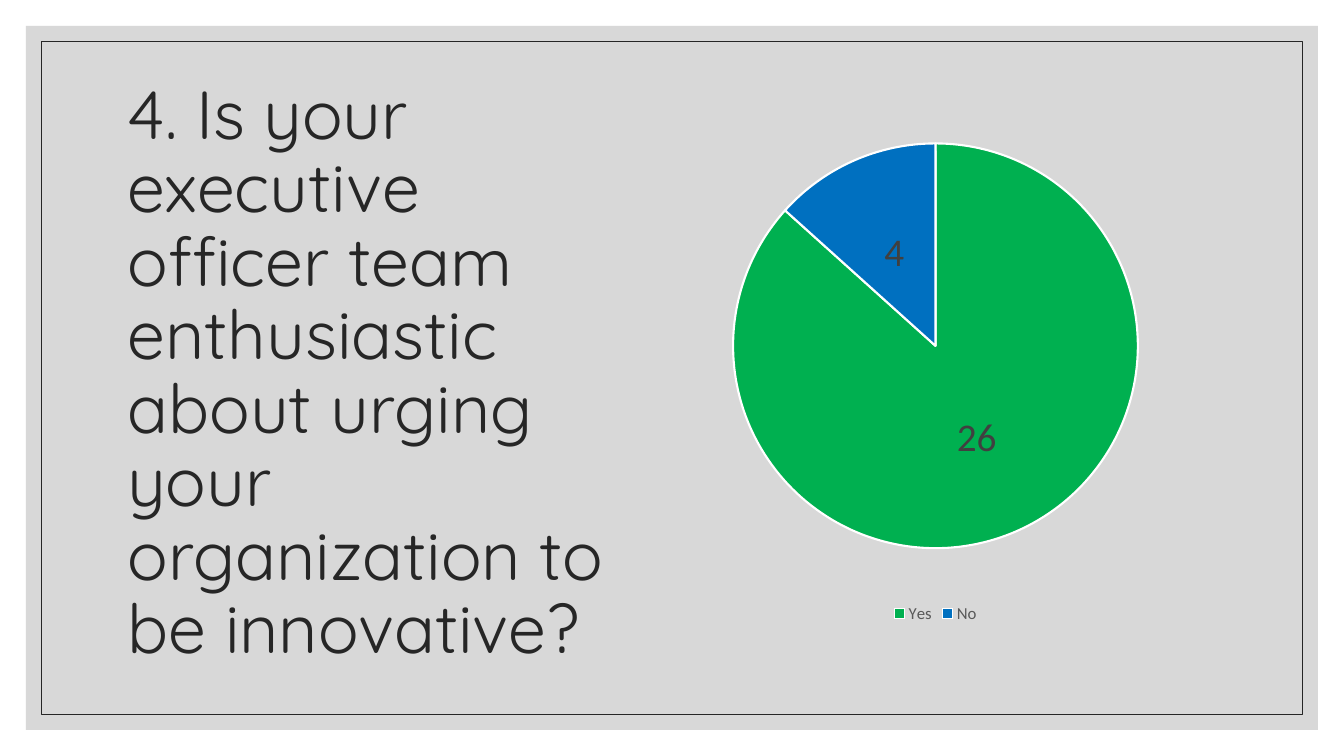
from lxml.etree import SubElement
from pptx import Presentation
from pptx.chart.data import CategoryChartData
from pptx.dml.color import RGBColor
from pptx.enum.chart import XL_CHART_TYPE, XL_LABEL_POSITION, XL_LEGEND_POSITION
from pptx.enum.shapes import MSO_SHAPE
from pptx.enum.text import MSO_ANCHOR, MSO_AUTO_SIZE, PP_ALIGN
from pptx.oxml.ns import qn
from pptx.util import Pt

COLORS = {
    "panel": "BFBFBF",
    "ink": "262626",
    "yes": "00B050",
    "no": "0070C0",
    "divider": "FFFFFF",
    "value": "404040",
    "legend": "595959",
}
SLIDE_WIDTH, SLIDE_HEIGHT = 960, 540
QUESTION = ("4. Is your executive officer team enthusiastic about urging "
            "your organization to be innovative?")
ANSWERS = {"Yes": 26, "No": 4}


def rgb(name):
    return RGBColor.from_string(COLORS[name])


def format_font(font, size, color, name):
    font.size = Pt(size)
    font.color.rgb = rgb(color)
    font.name = name
    font.bold = False


def write_text(frame, text, size=18, color="ink", font="Calibri",
               align=PP_ALIGN.LEFT, anchor=MSO_ANCHOR.MIDDLE, spacing=1.0):
    frame.word_wrap = True
    frame.auto_size = MSO_AUTO_SIZE.NONE
    frame.vertical_anchor = anchor
    paragraph = frame.paragraphs[0]
    paragraph.alignment = align
    paragraph.line_spacing = spacing
    run = paragraph.add_run()
    run.text = text
    format_font(run.font, size, color, font)


def add_inset_rectangle(slide, inset):
    rectangle = slide.shapes.add_shape(
        MSO_SHAPE.RECTANGLE, Pt(inset), Pt(inset),
        Pt(SLIDE_WIDTH - 2 * inset), Pt(SLIDE_HEIGHT - 2 * inset))
    rectangle.shadow.inherit = False
    return rectangle


def add_backdrop(slide):
    panel = add_inset_rectangle(slide, 18.6)
    panel.fill.solid()
    panel.fill.fore_color.rgb = rgb("panel")
    panel_color = panel.fill._xPr.find(qn("a:solidFill"))[0]
    SubElement(panel_color, qn("a:alpha"), val="60000")
    panel.line.fill.background()

    frame = add_inset_rectangle(slide, 29.5)
    frame.fill.background()
    frame.line.color.rgb = rgb("ink")
    frame.line.width = Pt(0.5)


def add_question(slide, left, top, width, height):
    question = slide.shapes.title
    slide.shapes.element.append(question.element)
    question.left, question.top = Pt(left), Pt(top)
    question.width, question.height = Pt(width), Pt(height)
    write_text(question.text_frame, QUESTION, size=48.6,
               font="Quicksand", spacing=0.9)


def set_layout(parent, after, **fractions):
    for old in parent.findall(qn("c:layout")):
        parent.remove(old)
    layout = SubElement(parent, qn("c:layout"))
    manual = SubElement(layout, qn("c:manualLayout"))
    if "w" in fractions:
        SubElement(manual, qn("c:layoutTarget"), val="inner")
    for axis in ("x", "y"):
        SubElement(manual, qn(f"c:{axis}Mode"), val="edge")
    for key, value in fractions.items():
        SubElement(manual, qn(f"c:{key}"), val=str(value))
    parent.insert(after, layout)


def add_answer_pie(slide, left, top, width, height):
    answers = CategoryChartData()
    answers.categories = list(ANSWERS)
    answers.add_series("Series 1", list(ANSWERS.values()))
    chart = slide.shapes.add_chart(
        XL_CHART_TYPE.PIE, Pt(left), Pt(top), Pt(width), Pt(height),
        answers).chart
    chart.has_title = False
    chart.font.name = "Calibri"
    chart.font.size = Pt(10)

    pie = chart.plots[0]
    pie.vary_by_categories = True
    for index, answer in enumerate(ANSWERS):
        slice_format = pie.series[0].points[index].format
        slice_format.fill.solid()
        slice_format.fill.fore_color.rgb = rgb(answer.lower())
        slice_format.line.color.rgb = rgb("divider")
        slice_format.line.width = Pt(1.5)

    values = pie.series[0].data_labels
    values.show_value = True
    values.show_percentage = False
    values.show_legend_key = False
    values.position = XL_LABEL_POSITION.CENTER
    format_font(values.font, 28, "value", "Calibri")

    chart.has_legend = True
    legend = chart.legend
    legend.position = XL_LEGEND_POSITION.BOTTOM
    legend.include_in_layout = False
    format_font(legend.font, 12, "legend", "Calibri")

    plot_area = chart.element.find(".//" + qn("c:plotArea"))
    set_layout(plot_area, 0, x=0.15, y=0.03, w=0.7, h=0.79)
    set_layout(chart.element.find(".//" + qn("c:legend")), 1, x=0.42, y=0.92)


def build_survey_slide(presentation):
    slide = presentation.slides.add_slide(presentation.slide_layouts[5])
    add_backdrop(slide)
    add_question(slide, 84, 50.5, 377, 434)
    add_answer_pie(slide, 461, 91.5, 414.5, 366)


def main():
    presentation = Presentation()
    presentation.slide_width = Pt(SLIDE_WIDTH)
    presentation.slide_height = Pt(SLIDE_HEIGHT)
    build_survey_slide(presentation)
    presentation.save("out.pptx")


if __name__ == "__main__":
    main()
